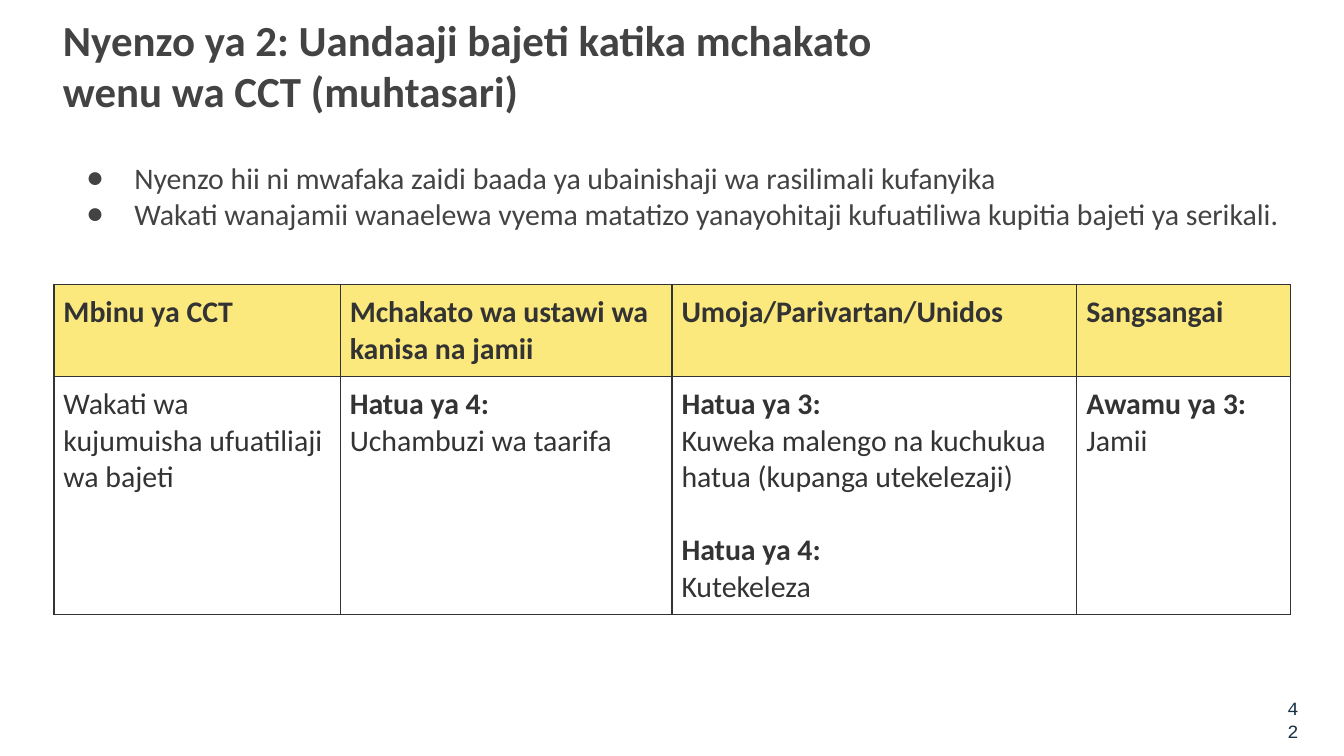
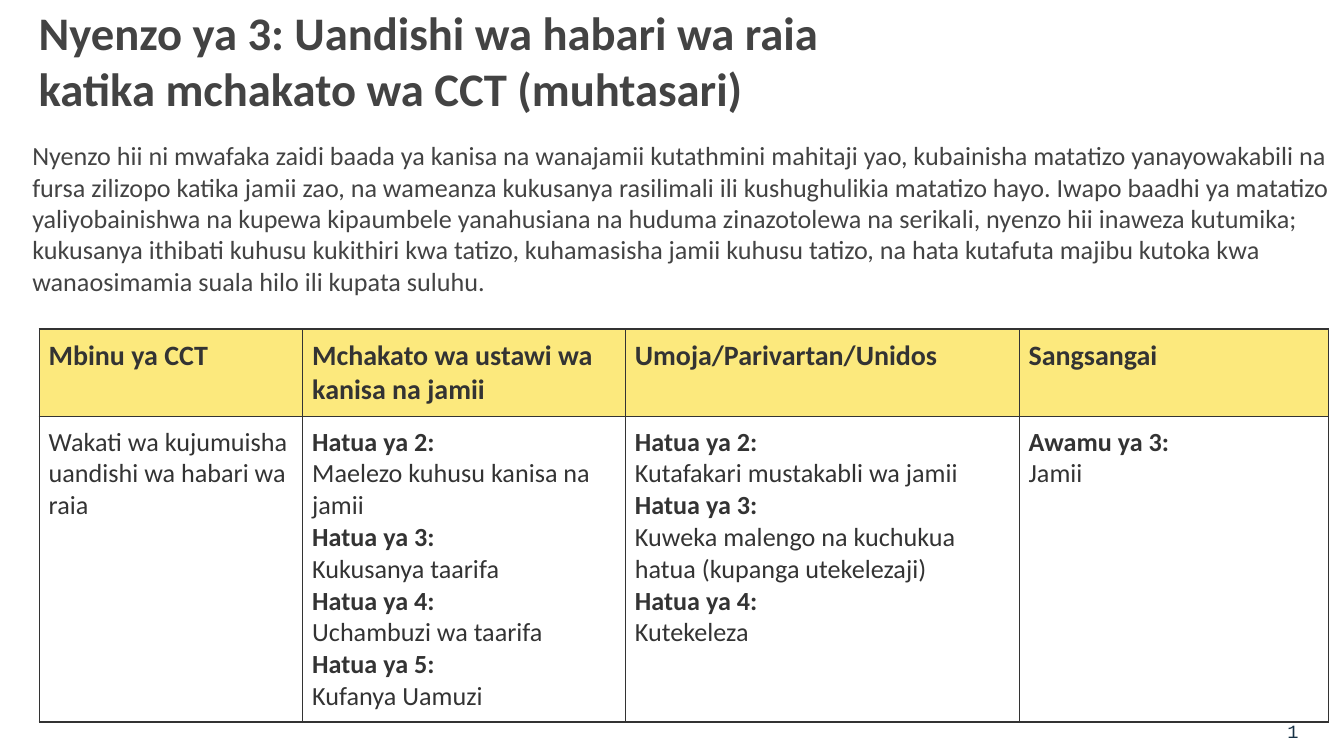
"""Builds two summary slides that place budget and reporting tools in the CCT process."""
import lxml.etree
import pptx
import pptx.dml.color
import pptx.enum.text
import pptx.oxml.ns
import pptx.util

Cm = pptx.util.Cm
Pt = pptx.util.Pt
GREY, INK, NAVY = "434343", "333333", "173145"
GOLD, WHITE = "FCE97D", "FFFFFF"
HEADS = ["Mbinu ya CCT", "Mchakato wa ustawi wa kanisa na jamii",
         "Umoja/Parivartan/Unidos", "Sangsangai"]


def rgb(code):
    return pptx.dml.color.RGBColor.from_string(code)


def add_tag(base, name, **attrs):
    return lxml.etree.SubElement(base, pptx.oxml.ns.qn(name), attrs)


class Deck:
    def __init__(self):
        self.prs = pptx.Presentation()
        self.prs.slide_width, self.prs.slide_height = Cm(25.4), Cm(14.29)
        self.slide = None

    def start(self, page):
        self.slide = self.prs.slides.add_slide(self.prs.slide_layouts[1])
        box = self.slide.shapes.add_textbox(0, 0, 0, 0)
        self.fill_box(box, (23.9, 12.93, 0.89, 0.76), page)
        line = box.text_frame.paragraphs[0]
        line.alignment = pptx.enum.text.PP_ALIGN.RIGHT
        self.style(line, 10, NAVY, face="Courier New")

    def style(self, line, size, color, bold=False, face="Calibri"):
        for run in line.runs:
            font = run.font
            font.name, font.size, font.bold = face, Pt(size), bold
            font.color.rgb = rgb(color)

    def fill_box(self, shape, place, text):
        shape.left, shape.top, shape.width, shape.height = map(Cm, place)
        frame = shape.text_frame
        frame.text = text
        frame.word_wrap = True
        frame.auto_size = pptx.enum.text.MSO_AUTO_SIZE.NONE
        frame.vertical_anchor = pptx.enum.text.MSO_ANCHOR.TOP
        frame.margin_left = frame.margin_right = Cm(0.25)
        frame.margin_top = frame.margin_bottom = Cm(0.25)

    def title(self, place, text, size):
        shape = self.slide.shapes.title
        self.fill_box(shape, place, text)
        line = shape.text_frame.paragraphs[0]
        line.alignment = pptx.enum.text.PP_ALIGN.LEFT
        self.style(line, size, GREY, True)

    def body(self, place, text, size, dots=False):
        shape = self.slide.placeholders[1]
        self.fill_box(shape, place, text)
        for line in shape.text_frame.paragraphs:
            line.space_before = Pt(0)
            props = line._p.get_or_add_pPr()
            props.set("marL", str(Cm(1.27 if dots else 0)))
            props.set("indent", str(Cm(-0.91 if dots else 0)))
            if dots:
                add_tag(add_tag(props, "a:buClr"), "a:srgbClr", val=GREY)
                add_tag(props, "a:buChar", char="●")
            else:
                add_tag(props, "a:buNone")
            self.style(line, size, GREY)

    def table(self, left, top, widths, heights, sizes, texts, gap=0):
        grid = self.slide.shapes.add_table(
            2, len(widths), Cm(left), Cm(top), Cm(sum(widths)), Cm(sum(heights))).table
        grid.first_row = grid.horz_banding = False
        for col, width in zip(grid.columns, widths):
            col.width = Cm(width)
        for r, row in enumerate([HEADS, texts]):
            grid.rows[r].height = Cm(heights[r])
            for c, text in enumerate(row):
                self.cell(grid.cell(r, c), text, sizes[r], r == 0, gap)

    def cell(self, cell, text, size, head, gap):
        cell.margin_left = cell.margin_right = Cm(0.18)
        cell.margin_top = cell.margin_bottom = Cm(0.18)
        for side in "LRTB":
            edge = add_tag(cell._tc.get_or_add_tcPr(), "a:ln" + side, w=str(Pt(0.75)))
            add_tag(add_tag(edge, "a:solidFill"), "a:srgbClr", val=INK)
        cell.fill.solid()
        cell.fill.fore_color.rgb = rgb(GOLD if head else WHITE)
        cell.text_frame.text = text
        for i, line in enumerate(cell.text_frame.paragraphs):
            if i and gap:
                line.space_before = Pt(gap)
            self.style(line, size, INK, head)
            if "\v" in line.text:
                line.runs[0].font.bold = True


def main():
    deck = Deck()
    deck.start("42")
    deck.title((0.94, 0, 15.93, 1.6),
               "Nyenzo ya 2: Uandaaji bajeti katika mchakato wenu wa CCT (muhtasari)", 23)
    deck.body((1.02, 2.77, 24.23, 2.16),
              "Nyenzo hii ni mwafaka zaidi baada ya ubainishaji wa rasilimali kufanyika\n"
              "Wakati wanajamii wanaelewa vyema matatizo yanayohitaji kufuatiliwa "
              "kupitia bajeti ya serikali.", 16, dots=True)
    deck.table(1.02, 5.38, [5.41, 6.27, 7.65, 4.04], [1.73, 4.5], [16, 16], [
        "Wakati wa kujumuisha ufuatiliaji wa bajeti",
        "Hatua ya 4:\vUchambuzi wa taarifa",
        "Hatua ya 3:\vKuweka malengo na kuchukua hatua (kupanga utekelezaji)\n"
        "Hatua ya 4:\vKutekeleza",
        "Awamu ya 3:\vJamii"], gap=19.5)

    deck.start("61")
    deck.title((0.48, -0.18, 15.9, 2.29),
               "Nyenzo ya 3: Uandishi wa habari wa raia katika mchakato wa CCT (muhtasari)", 25)
    deck.body((0.36, 2.39, 25.12, 3.15),
              "Nyenzo hii ni mwafaka zaidi baada ya kanisa na wanajamii kutathmini mahitaji "
              "yao, kubainisha matatizo yanayowakabili na fursa zilizopo katika jamii zao, na "
              "wameanza kukusanya rasilimali ili kushughulikia matatizo hayo. Iwapo baadhi ya "
              "matatizo yaliyobainishwa na kupewa kipaumbele yanahusiana na huduma "
              "zinazotolewa na serikali, nyenzo hii inaweza kutumika; kukusanya ithibati "
              "kuhusu kukithiri kwa tatizo, kuhamasisha jamii kuhusu tatizo, na hata kutafuta "
              "majibu kutoka kwa wanaosimamia suala hilo ili kupata suluhu.", 14)
    deck.table(0.74, 6.22, [4.98, 6.1, 7.44, 5.84], [1.65, 5.77], [15, 14], [
        "Wakati wa kujumuisha uandishi wa habari wa raia",
        "Hatua ya 2:\vMaelezo kuhusu kanisa na jamii\n"
        "Hatua ya 3:\vKukusanya taarifa\n"
        "Hatua ya 4:\vUchambuzi wa taarifa\n"
        "Hatua ya 5:\vKufanya Uamuzi",
        "Hatua ya 2:\vKutafakari mustakabli wa jamii\n"
        "Hatua ya 3:\vKuweka malengo na kuchukua hatua (kupanga utekelezaji)\n"
        "Hatua ya 4:\vKutekeleza",
        "Awamu ya 3:\vJamii"])
    deck.prs.save("out.pptx")


if __name__ == "__main__":
    main()
